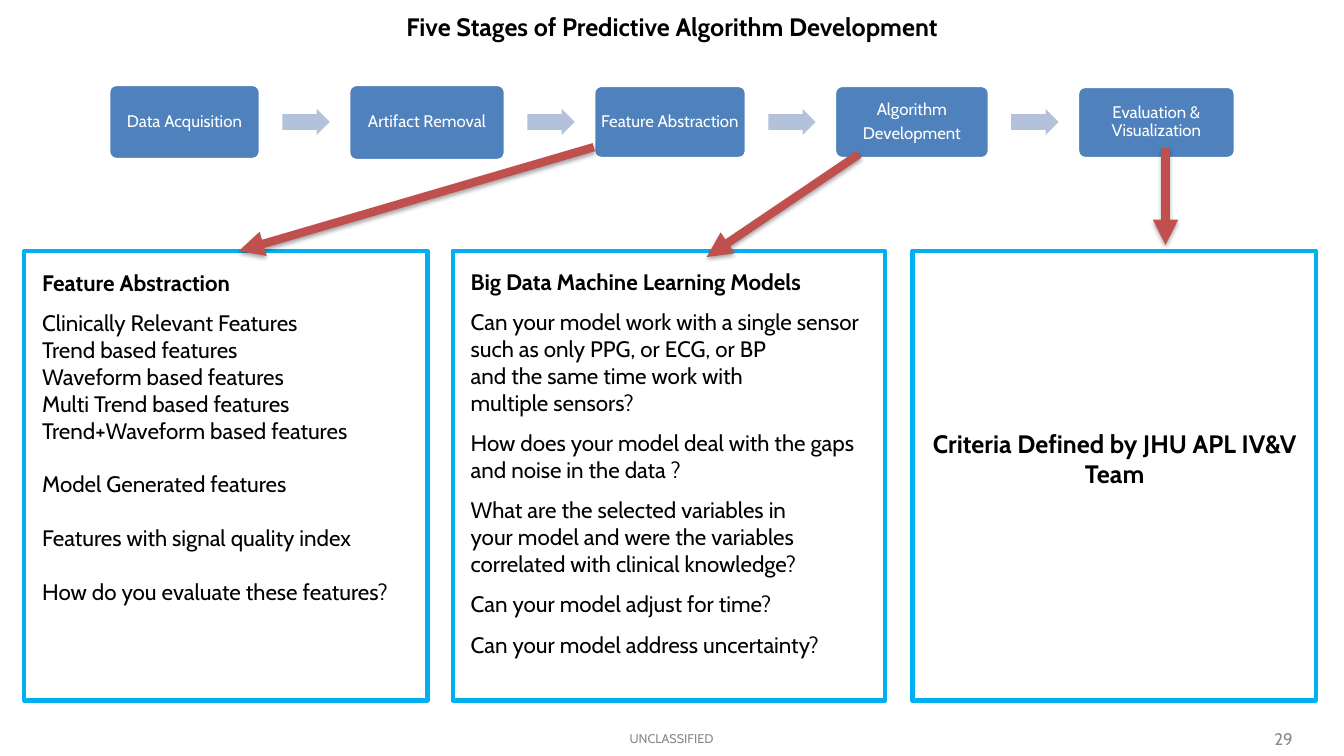
from dataclasses import dataclass

from lxml import etree
from pptx import Presentation
from pptx import util as u
from pptx.dml.color import RGBColor
from pptx.enum import shapes, text
from pptx.oxml.ns import qn

EMU_PER_PX = 9144  # 100 px to the inch
CENTER, LEFT, RIGHT = text.PP_ALIGN.CENTER, text.PP_ALIGN.LEFT, text.PP_ALIGN.RIGHT
TOP, MIDDLE = text.MSO_ANCHOR.TOP, text.MSO_ANCHOR.MIDDLE


@dataclass(frozen=True)
class Theme:
    font: str = "Cabin"
    ink: str = "000000"
    white: str = "FFFFFF"
    muted: str = "898989"
    stage: str = "4F81BD"
    step: str = "B3C1DB"
    panel: str = "00B0F0"
    pointer: str = "C0504D"
    title_pt: int = 18
    body_pt: int = 16
    stage_pt: int = 12
    page_pt: int = 12
    footer_pt: int = 9
    small_gap_pt: float = 9.6
    wide_gap_pt: float = 19.2
    stage_gap_pt: float = 4.2


THEME = Theme()

STAGES = [  # lines, width, height
    (["Data Acquisition"], 150, 74),
    (["Artifact Removal"], 155, 75),
    (["Feature Abstraction"], 151, 72),
    (["Algorithm", "Development"], 153, 72),
    (["Evaluation & Visualization"], 156, 71),
]
STAGES_LEFT, STAGES_MIDDLE = 108, 121
STEP_WIDTH, STEP_HEIGHT = 47, 26
GAP_BEFORE_STEP, GAP_AFTER_STEP = 22, 19

PANEL_TOP, PANEL_HEIGHT = 249, 446
PANELS = [(24, 400), (449, 429), (905, 400)]  # left, width

FEATURE_HEADING = "Feature Abstraction"
FEATURES = [
    "Clinically Relevant Features",
    "Trend based features",
    "Waveform based features",
    "Multi Trend based features",
    "Trend+Waveform based features",
]
FEATURE_NOTES = [
    "Model Generated features",
    "Features with signal quality index",
    "How do you evaluate these features?",
]
MODEL_HEADING = "Big Data Machine Learning Models"
MODEL_QUESTIONS = [
    ["Can your model work with a single sensor such as only PPG, or ECG, or BP",
     "and the same time work with",
     "multiple sensors?"],
    ["How does your model deal with the gaps and noise in the data ?"],
    ["What are the selected variables in",
     "your model and were the variables",
     "correlated with clinical knowledge?"],
    ["Can your model adjust for time?"],
    ["Can your model address uncertainty?"],
]
POINTERS = [(1156, 147, 1156, 243), (589, 146, 237, 249), (852, 153, 701, 255)]


def px(*lengths):
    return [u.Emu(length * EMU_PER_PX) for length in lengths]


def rgb(color):
    return RGBColor.from_string(color)


def add_line(frame, words, size, color, align=LEFT, bold=False, before=0):
    """Write one paragraph, using the frame's empty first paragraph if it is free."""
    first = frame.paragraphs[0]
    line = frame.add_paragraph() if first.runs else first
    line.alignment = align
    if before:
        line.space_before = u.Pt(before)
    run = line.add_run()
    run.text = words
    run.font.name = THEME.font
    run.font.size = u.Pt(size)
    run.font.bold = bold
    run.font.color.rgb = rgb(color)
    return line


def add_text_area(slide, box, anchor=TOP):
    frame = slide.shapes.add_textbox(*px(*box)).text_frame
    frame.word_wrap = True
    frame.vertical_anchor = anchor
    return frame


def add_block(slide, kind, box, fill=None, line=None, line_pt=0):
    block = slide.shapes.add_shape(kind, *px(*box))
    block.shadow.inherit = False
    if fill:
        block.fill.solid()
        block.fill.fore_color.rgb = rgb(fill)
    else:
        block.fill.background()
    if line:
        block.line.color.rgb = rgb(line)
        block.line.width = u.Pt(line_pt)
    else:
        block.line.fill.background()
    return block


def add_stage(slide, lines, box):
    stage = add_block(slide, shapes.MSO_SHAPE.ROUNDED_RECTANGLE, box,
                      THEME.stage, THEME.white, 2)
    stage.adjustments[0] = 0.1
    frame = stage.text_frame
    frame.word_wrap = True
    frame.vertical_anchor = MIDDLE
    frame.margin_left = frame.margin_right = frame.margin_top = frame.margin_bottom = px(4)[0]
    for index, words in enumerate(lines):
        line = add_line(frame, words, THEME.stage_pt, THEME.white, CENTER,
                        before=THEME.stage_gap_pt if index else 0)
        line.line_spacing = 0.9


def add_process(slide):
    """Lay the stages out in a row, with a step arrow between neighbours."""
    left = STAGES_LEFT
    for index, (lines, width, height) in enumerate(STAGES):
        if index:
            left += GAP_BEFORE_STEP
            step = add_block(slide, shapes.MSO_SHAPE.RIGHT_ARROW,
                             (left, STAGES_MIDDLE - STEP_HEIGHT // 2, STEP_WIDTH, STEP_HEIGHT),
                             THEME.step)
            step.adjustments[0] = 0.6
            left += STEP_WIDTH + GAP_AFTER_STEP
        add_stage(slide, lines, (left, STAGES_MIDDLE - height // 2, width, height))
        left += width


def add_pointer(slide, ends):
    """Draw a thick arrow with a soft shadow below it."""
    pointer = slide.shapes.add_connector(shapes.MSO_CONNECTOR.STRAIGHT, *px(*ends))
    pointer.line.color.rgb = rgb(THEME.pointer)
    pointer.line.width = u.Pt(6)
    etree.SubElement(pointer.line._get_or_add_ln(), qn("a:tailEnd"), type="triangle")
    effects = etree.SubElement(pointer._element.spPr, qn("a:effectLst"))
    shadow = etree.SubElement(effects, qn("a:outerShdw"), blurRad="40000", dist="23000",
                              dir="5400000", rotWithShape="0")
    shade = etree.SubElement(shadow, qn("a:srgbClr"), val=THEME.ink)
    etree.SubElement(shade, qn("a:alpha"), val="35000")


def add_details(slide, box, heading, groups):
    """Write a bold heading, then groups of lines, each group with its gap before."""
    frame = add_text_area(slide, box)
    add_line(frame, heading, THEME.body_pt, THEME.ink, bold=True)
    for gap, lines in groups:
        for index, words in enumerate(lines):
            add_line(frame, words, THEME.body_pt, THEME.ink, before=0 if index else gap)


def main():
    deck = Presentation()
    deck.slide_width, deck.slide_height = px(1333, 750)
    slide = deck.slides.add_slide(deck.slide_layouts[6])

    add_line(add_text_area(slide, (333, 6, 667, 40)),
             "Five Stages of Predictive Algorithm Development",
             THEME.title_pt, THEME.ink, CENTER, bold=True)
    add_process(slide)
    for left, width in PANELS:
        add_block(slide, shapes.MSO_SHAPE.RECTANGLE, (left, PANEL_TOP, width, PANEL_HEIGHT),
                  line=THEME.panel, line_pt=3)

    add_details(slide, (32, 262, 411, 401), FEATURE_HEADING,
                [(THEME.small_gap_pt, FEATURES)]
                + [(THEME.wide_gap_pt, [note]) for note in FEATURE_NOTES])
    add_details(slide, (457, 261, 415, 401), MODEL_HEADING,
                [(THEME.small_gap_pt, question) for question in MODEL_QUESTIONS])
    add_line(add_text_area(slide, (910, 420, 391, 71)),
             "Criteria Defined by JHU APL IV&V Team",
             THEME.title_pt, THEME.ink, CENTER, bold=True)
    for ends in POINTERS:
        add_pointer(slide, ends)

    add_line(add_text_area(slide, (194, 716, 944, 33), MIDDLE),
             "UNCLASSIFIED", THEME.footer_pt, THEME.muted, CENTER)
    add_line(add_text_area(slide, (1181, 717, 111, 32), MIDDLE),
             "29", THEME.page_pt, THEME.muted, RIGHT)
    deck.save("out.pptx")


if __name__ == "__main__":
    main()
